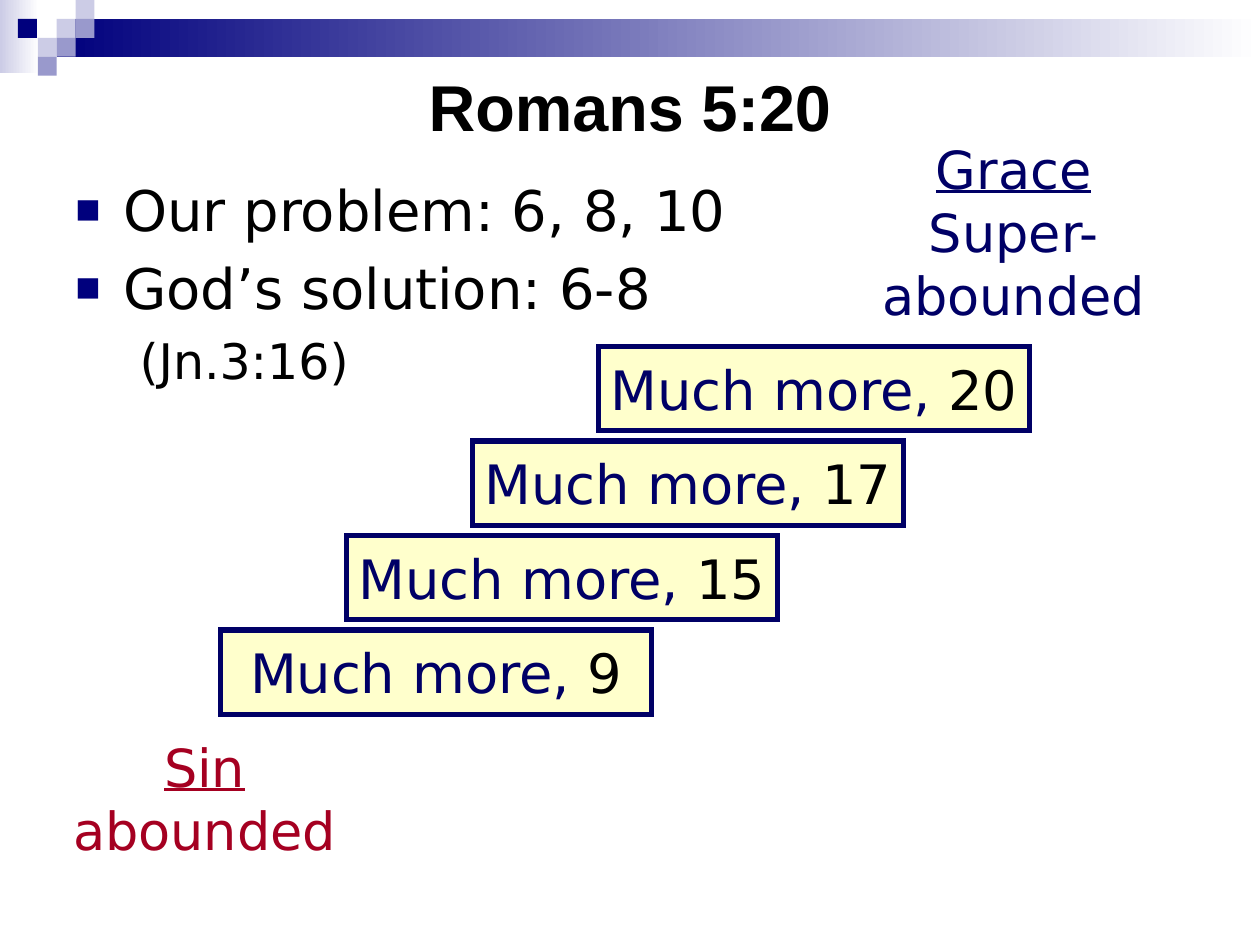
from lxml.etree import SubElement
from pptx import Presentation
from pptx.dml.color import RGBColor
from pptx.enum.shapes import MSO_SHAPE
from pptx.enum.text import MSO_ANCHOR, PP_ALIGN
from pptx.oxml.ns import qn
from pptx.util import Inches, Pt

COLORS = {
    "navy": "00007D", "lavender": "CCCCE6", "violet": "9999CC", "white": "FFFFFF",
    "black": "000000", "ink": "000066", "cream": "FFFFCC", "crimson": "A50021",
}
BODY_FONT = "DejaVu Sans"
TILE = 0.15
# Column, row and color of each tile in the corner mosaic
TILES = [
    (3, 1, "lavender"), (4, 0, "lavender"), (4, 1, "violet"), (2, 2, "lavender"),
    (0.95, 1, "navy"), (3, 2, "violet"), (2, 3, "violet"),
]
STEP_VERSES = ["9", "15", "17", "20"]
STEP_RUN, STEP_RISE = 1, 0.75


def color(name):
    return RGBColor.from_string(COLORS[name])


def format_span(span, size, color_name, font=BODY_FONT):
    span.font.size = Pt(size)
    span.font.name = font
    span.font.color.rgb = color(color_name)


def add_rectangle(page, left, top, width, height):
    box = page.shapes.add_shape(
        MSO_SHAPE.RECTANGLE, Inches(left), Inches(top), Inches(width), Inches(height))
    box.shadow.inherit = False
    box.line.fill.background()
    return box


def add_fading_bar(page, left, top, width, height, color_name):
    """Add a bar that fades to white from left to right."""
    bar = add_rectangle(page, left, top, width, height)
    bar.fill.gradient()
    bar.fill.gradient_angle = 0
    for stop, name in zip(bar.fill.gradient_stops, (color_name, "white")):
        stop.color.rgb = color(name)


def add_mosaic(page):
    add_fading_bar(page, 0, 0, 0.31, 0.58, "lavender")
    add_fading_bar(page, 3 * TILE, TILE, 10 - 3 * TILE, 2 * TILE, "navy")
    for column, row, name in TILES:
        tile = add_rectangle(page, column * TILE, row * TILE, TILE, TILE)
        tile.fill.solid()
        tile.fill.fore_color.rgb = color(name)


def set_title(page, text):
    title = page.shapes.title
    title.left, title.top = Inches(0.5), Inches(0.5)
    title.width, title.height = Inches(9), Inches(0.67)
    title.text_frame.text = text
    title.text_frame.vertical_anchor = MSO_ANCHOR.MIDDLE
    paragraph = title.text_frame.paragraphs[0]
    paragraph.alignment = PP_ALIGN.CENTER
    format_span(paragraph.runs[0], 37, "black", "Arial")
    paragraph.runs[0].font.bold = True


def add_bullet(properties):
    bullet_color = SubElement(properties, qn("a:buClr"))
    SubElement(bullet_color, qn("a:srgbClr"), val=COLORS["navy"])
    SubElement(properties, qn("a:buSzPct"), val="75000")
    SubElement(properties, qn("a:buFont"), typeface="Arial")
    SubElement(properties, qn("a:buChar"), char="■")


def add_outline(page, lines):
    """Add the list; each line is its text, size and whether it has a bullet."""
    box = page.shapes.add_textbox(Inches(0.5), Inches(1.34), Inches(9), Inches(5.33))
    frame = box.text_frame
    frame.word_wrap = True
    frame.text = "\n".join(text for text, _, _ in lines)
    for paragraph, (_, size, bulleted) in zip(frame.paragraphs, lines):
        paragraph.space_before = Pt(round(size * 0.2, 1))
        format_span(paragraph.runs[0], size, "black")
        properties = paragraph._p.get_or_add_pPr()
        properties.set("marL", str(Inches(0.38 if bulleted else 0.51)))
        properties.set("indent", str(Inches(-0.38 if bulleted else 0)))
        if bulleted:
            add_bullet(properties)
        else:
            paragraph.level = 1


def add_step(page, index, verse):
    box = add_rectangle(
        page, 1.75 + index * STEP_RUN, 5 - index * STEP_RISE, 3.42, 0.67)
    box.fill.solid()
    box.fill.fore_color.rgb = color("cream")
    box.line.color.rgb = color("ink")
    box.line.width = Pt(3)
    SubElement(box.line._get_or_add_ln(), qn("a:miter"), lim="800000")
    frame = box.text_frame
    frame.word_wrap = False
    frame.vertical_anchor = MSO_ANCHOR.MIDDLE
    paragraph = frame.paragraphs[0]
    paragraph.alignment = PP_ALIGN.CENTER
    for text, name in (("Much more, ", "ink"), (verse, "black")):
        span = paragraph.add_run()
        span.text = text
        format_span(span, 31, name)


def add_caption(page, left, top, height, text, color_name):
    """Add a centred caption whose first line is underlined."""
    box = page.shapes.add_textbox(
        Inches(left), Inches(top), Inches(2.25), Inches(height))
    frame = box.text_frame
    frame.word_wrap = False
    frame.margin_left = frame.margin_right = 0
    frame.vertical_anchor = MSO_ANCHOR.MIDDLE
    frame.text = text
    for paragraph in frame.paragraphs:
        paragraph.alignment = PP_ALIGN.CENTER
        for span in paragraph.runs:
            format_span(span, 30, color_name)
    frame.paragraphs[0].runs[0].font.underline = True


def main():
    deck = Presentation()
    deck.slide_width, deck.slide_height = Inches(10), Inches(7.5)
    page = deck.slides.add_slide(deck.slide_layouts[5])
    add_mosaic(page)
    set_title(page, "Romans 5:20")
    add_outline(page, [
        ("Our problem: 6, 8, 10", 32, True),
        ("God’s solution: 6-8", 32, True),
        ("(Jn.3:16)", 28, False),
    ])
    for index, verse in enumerate(STEP_VERSES):
        add_step(page, index, verse)
    add_caption(page, 0.5, 5.83, 1, "Sin\vabounded", "crimson")
    add_caption(page, 6.92, 1, 1.67, "Grace\nSuper-\vabounded", "ink")
    deck.save("out.pptx")


if __name__ == "__main__":
    main()
